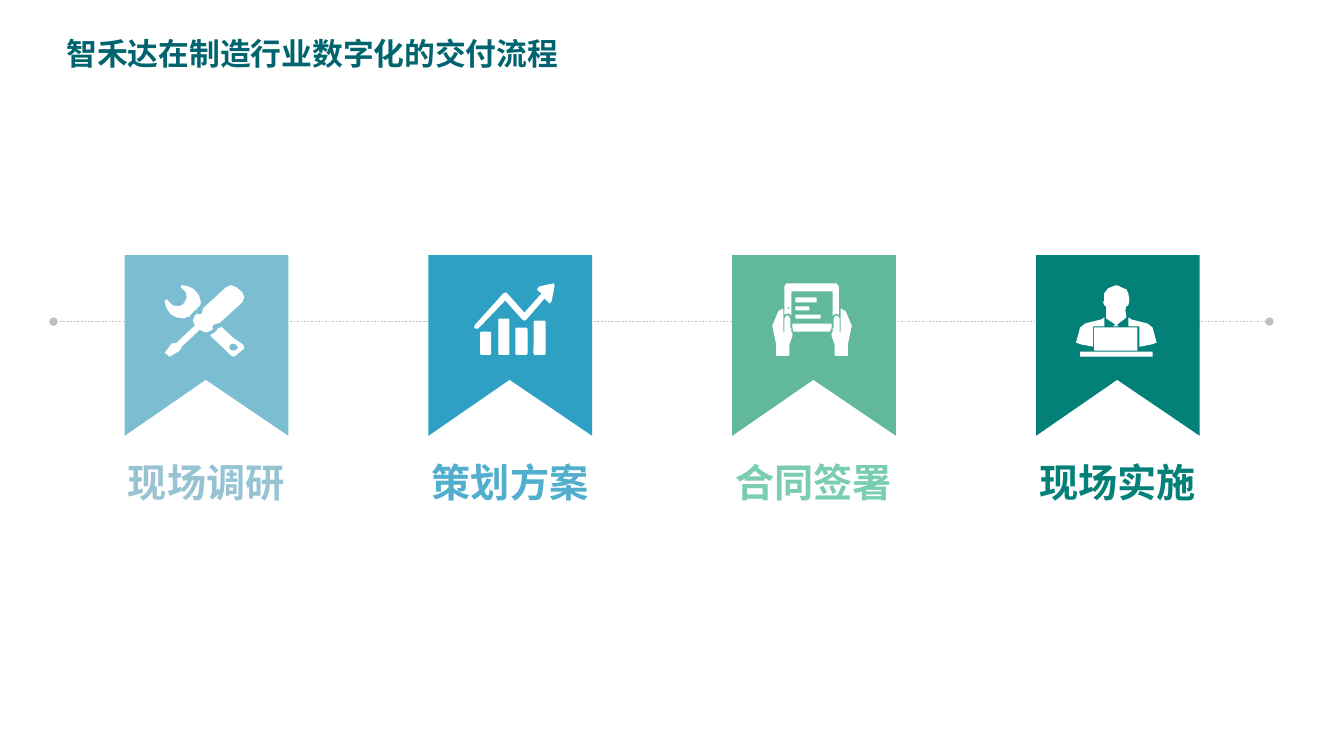
import pptx
import pptx.util
import pptx.dml.color
import pptx.enum.dml
import pptx.enum.shapes
import pptx.enum.text
import pptx.oxml
import pptx.oxml.ns

Pt = pptx.util.Pt
RGB = pptx.dml.color.RGBColor.from_string
SHAPES = pptx.enum.shapes.MSO_SHAPE
ALIGN = pptx.enum.text.PP_ALIGN
MIDDLE = pptx.enum.text.MSO_ANCHOR.MIDDLE

TITLE = "智禾达在制造行业数字化的交付流程"


def mirror(outline, width):
    return [(width - x, y) for x, y in outline]


# Icon outlines are lists of contours on a grid of ICON_UNIT points.
WRENCH_HANDLE = [
    [(52, 42), (53, 43), (51, 46), (45, 50), (59, 63), (66, 70), (69, 71),
     (79, 63), (78, 59), (69, 53), (56, 41), (55, 43)],
    [(68, 58), (71, 59), (73, 62), (71, 64), (68, 65), (65, 64), (64, 62), (65, 59)],
]
WRENCH_HEAD = [
    [(29, 26), (31, 24), (33, 25), (32, 23), (34, 21), (35, 21), (36, 17), (34, 10),
     (29, 4), (23, 1), (17, 0), (16, 2), (21, 7), (22, 12), (20, 17), (17, 20),
     (13, 21), (8, 20), (2, 14), (0, 16), (2, 23), (6, 29), (12, 32), (19, 33),
     (24, 31), (24, 32), (27, 28)],
]
SCREWDRIVER = [
    [(77, 7), (71, 2), (66, 0), (61, 2), (38, 23), (37, 28), (34, 29), (32, 28),
     (30, 30), (28, 35), (30, 40), (12, 57), (7, 58), (0, 67), (5, 71), (15, 65),
     (17, 61), (35, 44), (36, 45), (41, 47), (46, 45), (48, 43), (47, 41), (49, 39),
     (52, 38), (54, 38), (77, 17), (79, 12)],
]
TREND_ARROW = [
    [(79, 0), (65, 3), (63, 5), (63, 7), (67, 10), (50, 29), (33, 10), (31, 9),
     (29, 10), (2, 40), (0, 43), (1, 45), (4, 45), (31, 17), (48, 36), (50, 37),
     (52, 36), (70, 15), (74, 19), (75, 20), (77, 18), (80, 2)],
]
TABLET_FRAME = [
    [(63, 30), (66, 31), (66, 3), (64, 0), (14, 0), (12, 3), (12, 31), (15, 30),
     (17, 30), (19, 32), (19, 8), (60, 8), (60, 32)],
    [(16, 23), (17, 24), (16, 26), (15, 24)],
]
TABLET_BASE = [[(20, 44), (21, 48), (57, 48), (59, 44), (59, 40), (20, 40)]]
HAND = [
    (20, 53), (20, 49), (19, 48), (19, 45), (18, 44), (18, 35), (16, 32), (14, 32),
    (12, 35), (12, 48), (11, 48), (11, 25), (7, 27), (6, 28), (0, 42), (4, 61),
    (4, 72), (16, 72), (17, 71), (17, 61), (19, 55)]
HEAD = [
    [(41, 39), (49, 33), (50, 31), (49, 25), (50, 21), (52, 20), (53, 15), (52, 8),
     (50, 4), (47, 3), (43, 1), (40, 0), (37, 1), (32, 3), (28, 8), (28, 15),
     (27, 17), (28, 20), (30, 21), (30, 33), (39, 39), (37, 41), (42, 41)],
]
SHOULDER = [(28, 41), (28, 32), (25, 34), (9, 38), (4, 42), (0, 57), (6, 59),
            (17, 61), (17, 41)]

STEPS = [
    {"label": "现场调研", "ribbon": "7CBED1", "text": "97C3D2", "icon_at": (-29.7, 203.7),
     "outlines": [WRENCH_HANDLE, WRENCH_HEAD, SCREWDRIVER]},
    {"label": "策划方案", "ribbon": "2EA0C3", "text": "51AECD", "icon_at": (-25.7, 202.4),
     "outlines": [TREND_ARROW],
     "bars": [(6, 48, 11, 23), (24, 35, 11, 36), (41, 44, 12, 27), (59, 37, 12, 34)]},
    {"label": "合同签署", "ribbon": "61B89D", "text": "7ACCB2", "icon_at": (-29.7, 202.4),
     "outlines": [TABLET_FRAME, TABLET_BASE, [HAND], [mirror(HAND, 79)]],
     "rects": [(23, 14, 21, 5), (23, 23, 14, 4), (23, 31, 25, 4)]},
    {"label": "现场实施", "ribbon": "038077", "text": "038077", "icon_at": (-29.7, 203.7),
     "outlines": [HEAD, [SHOULDER], [mirror(SHOULDER, 80)]],
     "rects": [(18, 42, 43, 23), (4, 66, 72, 5)]},
]

THEME = {
    "title": {"size": Pt(22), "name": "Arial", "bold": True, "color": "00646E"},
    "label": {"size": Pt(28), "name": "Noto Sans CJK SC", "bold": True},
    "line": "BFBFBF",
    "icon": "FFFFFF",
}
ICON_UNIT = 0.72
FIRST_CENTRE, PITCH = 147.4, 217.1
RIBBON_W, RIBBON_TOP, RIBBON_H, NOTCH_H = 116.6, 182.3, 128.8, 39.4
LABEL_W, LABEL_TOP, LABEL_H = 149, 324, 41
LINE_LEFT, LINE_RIGHT, LINE_Y = 38.2, 907.2, 229.7


def set_text(tf, text, align, fmt, frame):
    for name, value in frame.items():
        setattr(tf, name, value)
    p = tf.paragraphs[0]
    p.alignment = align
    r = p.add_run()
    r.text = text
    for name, value in fmt.items():
        if name == "color":
            r.font.color.rgb = RGB(value)
        else:
            setattr(r.font, name, value)
    ea = pptx.oxml.parse_xml(
        '<a:ea %s typeface="%s"/>' % (pptx.oxml.ns.nsdecls("a"), fmt["name"]))
    r.font._element.find(pptx.oxml.ns.qn("a:latin")).addnext(ea)


def paint(sp, color):
    sp.shadow.inherit = False
    sp.fill.solid()
    sp.fill.fore_color.rgb = RGB(color)
    sp.line.fill.background()


def add_outline(shapes, contours, left, top, unit, color):
    """Draw closed contours as one shape; an inner contour is a hole."""
    first, *others = contours
    builder = shapes.build_freeform(*first[0], scale=Pt(unit))
    builder.add_line_segments(first[1:], close=True)
    for contour in others:
        builder.move_to(*contour[0])
        builder.add_line_segments(contour[1:], close=True)
    paint(builder.convert_to_shape(Pt(left), Pt(top)), color)


def add_icon(shapes, step, centre):
    dx, top = step["icon_at"]
    left = centre + dx
    for contours in step["outlines"]:
        add_outline(shapes, contours, left, top, ICON_UNIT, THEME["icon"])
    for key, preset in (("rects", SHAPES.RECTANGLE), ("bars", SHAPES.ROUNDED_RECTANGLE)):
        for x, y, w, h in step.get(key, []):
            sp = shapes.add_shape(preset, Pt(left + x * ICON_UNIT), Pt(top + y * ICON_UNIT),
                                  Pt(w * ICON_UNIT), Pt(h * ICON_UNIT))
            if key == "bars":
                sp.adjustments[0] = 0.12
            paint(sp, THEME["icon"])


def add_timeline(shapes):
    line = shapes.add_connector(pptx.enum.shapes.MSO_CONNECTOR.STRAIGHT,
                                Pt(LINE_RIGHT), Pt(LINE_Y), Pt(LINE_LEFT), Pt(LINE_Y))
    line.line.color.rgb = RGB(THEME["line"])
    line.line.width = Pt(1.25)
    line.line.dash_style = pptx.enum.dml.MSO_LINE.ROUND_DOT
    ns = pptx.oxml.ns.nsdecls("a")
    ln = line.line._get_or_add_ln()
    for end in ("headEnd", "tailEnd"):
        ln.append(pptx.oxml.parse_xml('<a:%s %s type="oval"/>' % (end, ns)))
    ln.addnext(pptx.oxml.parse_xml("<a:effectLst %s/>" % ns))


def add_step(shapes, step, centre):
    ribbon = [(0, 0), (RIBBON_W, 0), (RIBBON_W, RIBBON_H),
              (RIBBON_W / 2, RIBBON_H - NOTCH_H), (0, RIBBON_H)]
    add_outline(shapes, [ribbon], centre - RIBBON_W / 2, RIBBON_TOP, 1, step["ribbon"])
    add_icon(shapes, step, centre)
    box = shapes.add_textbox(Pt(centre - LABEL_W / 2), Pt(LABEL_TOP), Pt(LABEL_W), Pt(LABEL_H))
    set_text(box.text_frame, step["label"], ALIGN.CENTER,
             {**THEME["label"], "color": step["text"]}, {"word_wrap": True})


def main():
    prs = pptx.Presentation()
    prs.slide_width, prs.slide_height = Pt(960.48), Pt(540)
    s = prs.slides.add_slide(prs.slide_layouts[5])
    title = s.shapes.title
    title.left, title.top, title.width, title.height = Pt(0), Pt(0), Pt(960), Pt(75.6)
    set_text(title.text_frame, TITLE, ALIGN.LEFT, THEME["title"],
             {"word_wrap": True, "vertical_anchor": MIDDLE, "margin_left": Pt(47.5),
              "auto_size": pptx.enum.text.MSO_AUTO_SIZE.NONE})
    add_timeline(s.shapes)
    for i, step in enumerate(STEPS):
        add_step(s.shapes, step, FIRST_CENTRE + i * PITCH)
    prs.save("out.pptx")


if __name__ == "__main__":
    main()
